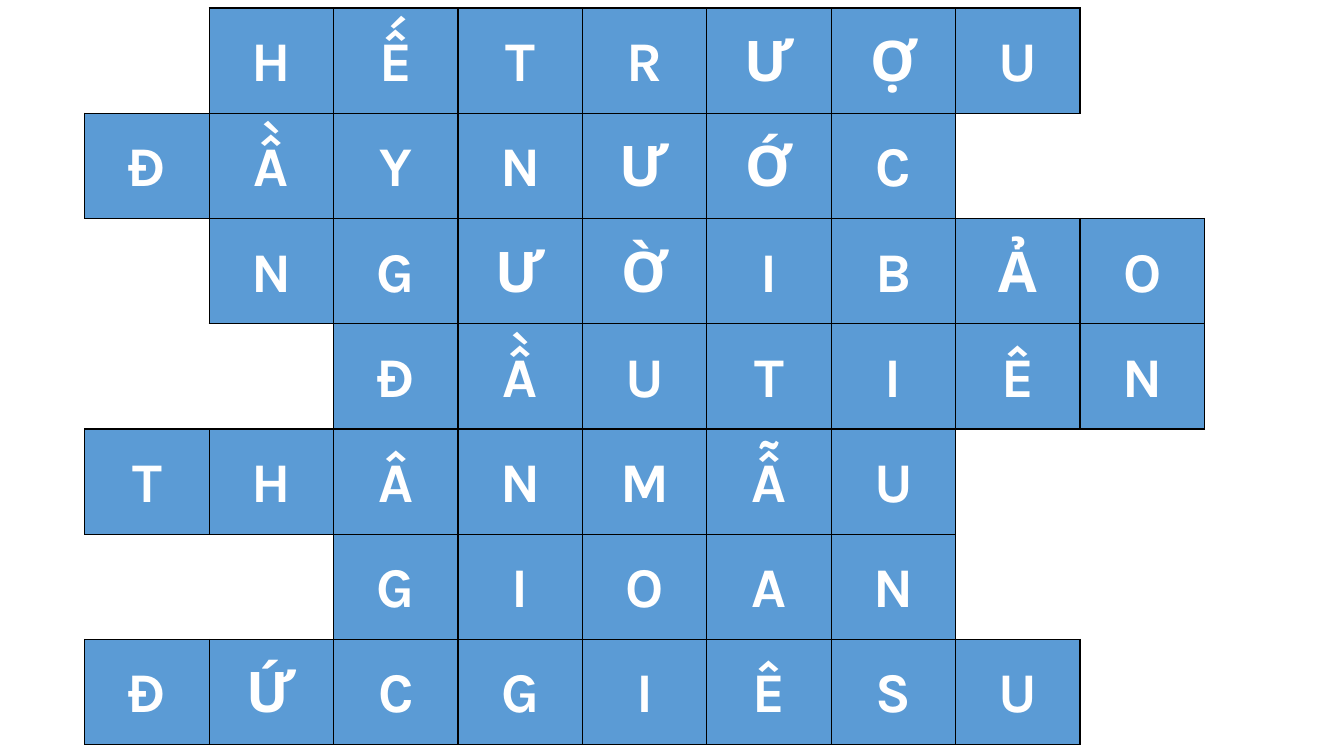
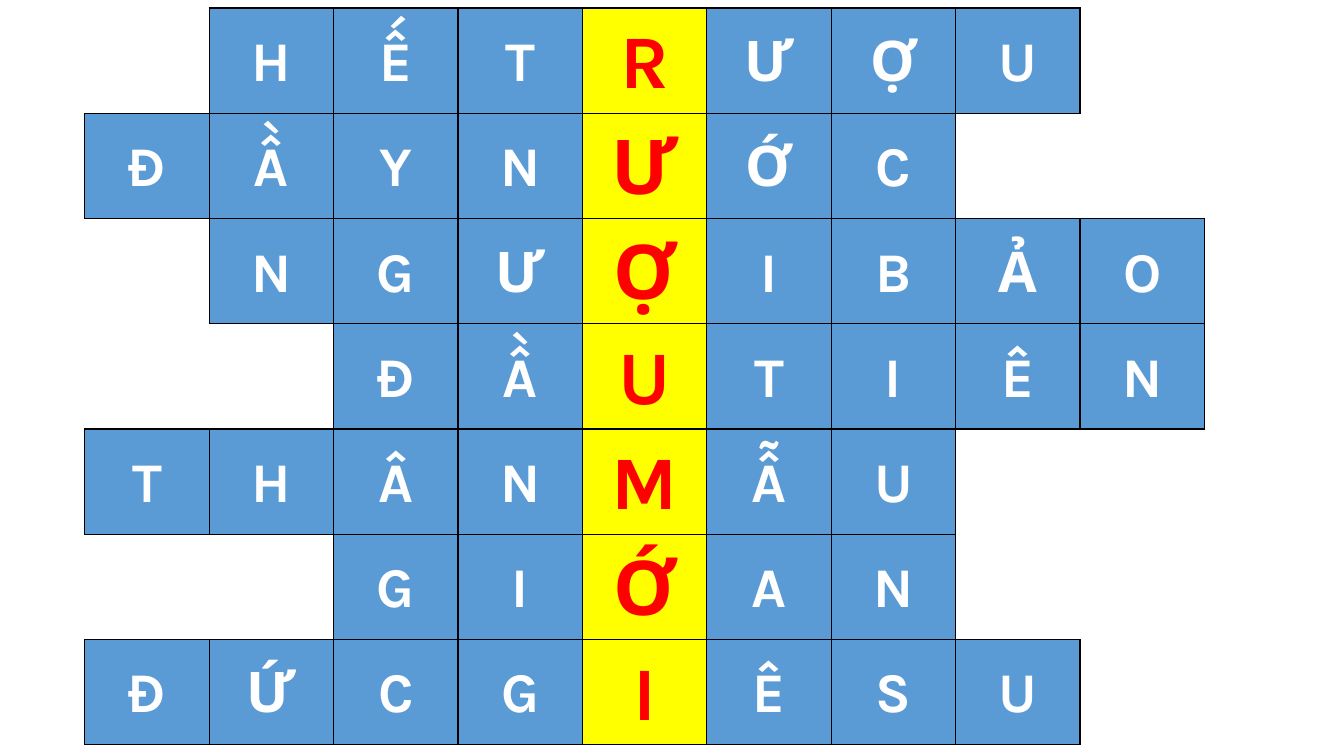
from lxml.etree import SubElement
from pptx import Presentation
from pptx.dml.color import RGBColor
from pptx.enum.text import MSO_ANCHOR, PP_ALIGN
from pptx.oxml import parse_xml
from pptx.oxml.ns import nsdecls, qn
from pptx.util import Inches, Pt

# Content: one string per row, a space is an empty square
ANSWERS = [
    " HẾTRƯỢU  ",
    "ĐẦYNƯỚC   ",
    " NGƯỜIBẢO ",
    "  ĐẦUTIÊN ",
    "THÂNMẪU   ",
    "  GIOAN   ",
    "ĐỨCGIÊSU  ",
]
KEYWORD = "RƯỢUMỚI"
KEY_COLUMN = 4
ROWS, COLUMNS = len(ANSWERS), len(ANSWERS[0])

# Shared style
COLORS = {
    "square": "5B9BD5",
    "letter": "FFFFFF",
    "key_square": "FFFF00",
    "key_letter": "FF0000",
    "empty": "FFFFFF",
    "border": "000000",
}
FONT = "Karla"
BORDER_WIDTH = Pt(1)
SIDES = {"a:lnL": (0, -1), "a:lnR": (0, 1), "a:lnT": (-1, 0), "a:lnB": (1, 0)}


def write_text(cell, text, size=40, color="letter"):
    cell.vertical_anchor = MSO_ANCHOR.MIDDLE
    cell.margin_left = cell.margin_right = Inches(0.07)
    cell.margin_top = cell.margin_bottom = 0
    para = cell.text_frame.paragraphs[0]
    para.alignment = PP_ALIGN.CENTER
    para.line_spacing = 1.07
    para.space_after = Pt(8)
    span = para.add_run()
    span.text = text
    span.font.name = FONT
    span.font.size = Pt(size)
    span.font.bold = True
    span.font.color.rgb = RGBColor.from_string(COLORS[color])


def fill_cell(cell, color):
    cell.fill.solid()
    cell.fill.fore_color.rgb = RGBColor.from_string(COLORS[color])


def has_letter(row, column):
    return 0 <= row < ROWS and 0 <= column < COLUMNS and ANSWERS[row][column] != " "


def draw_borders(cell, row, column):
    """Draw every edge that touches a lettered square."""
    properties = cell._tc.get_or_add_tcPr()
    for index, (tag, (down, right)) in enumerate(SIDES.items()):
        line = parse_xml(f'<{tag} {nsdecls("a")} w="{BORDER_WIDTH}"/>')
        if has_letter(row, column) or has_letter(row + down, column + right):
            solid = SubElement(line, qn("a:solidFill"))
            SubElement(solid, qn("a:srgbClr"), val=COLORS["border"])
        else:
            SubElement(line, qn("a:noFill"))
        properties.insert(index, line)


def add_crossword(deck, show_keyword):
    page = deck.slides.add_slide(deck.slide_layouts[6])
    table = page.shapes.add_table(
        ROWS, COLUMNS, Inches(0.84), Inches(0.08), Inches(12.34), Inches(7.31)
    ).table
    table.first_row = table.horz_banding = False
    for row, answer in enumerate(ANSWERS):
        for column, letter in enumerate(answer):
            cell = table.cell(row, column)
            if letter == " ":
                fill_cell(cell, "empty")
            elif show_keyword and column == KEY_COLUMN:
                fill_cell(cell, "key_square")
                write_text(cell, KEYWORD[row], size=54, color="key_letter")
            else:
                fill_cell(cell, "square")
                write_text(cell, letter)
            draw_borders(cell, row, column)


def main():
    deck = Presentation()
    deck.slide_width, deck.slide_height = Inches(13.33), Inches(7.5)
    for show_keyword in (False, True):
        add_crossword(deck, show_keyword)
    deck.save("out.pptx")


if __name__ == "__main__":
    main()
